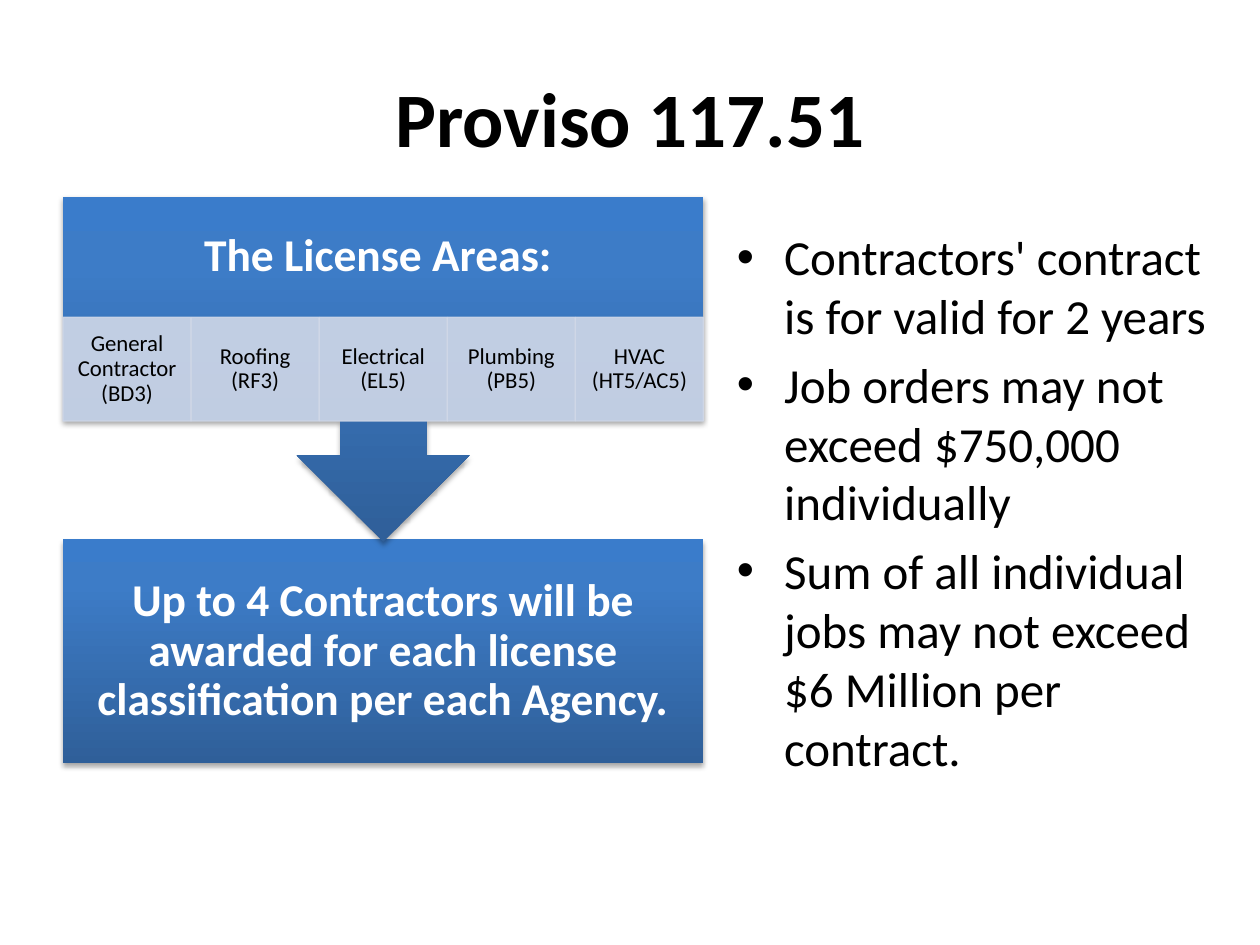
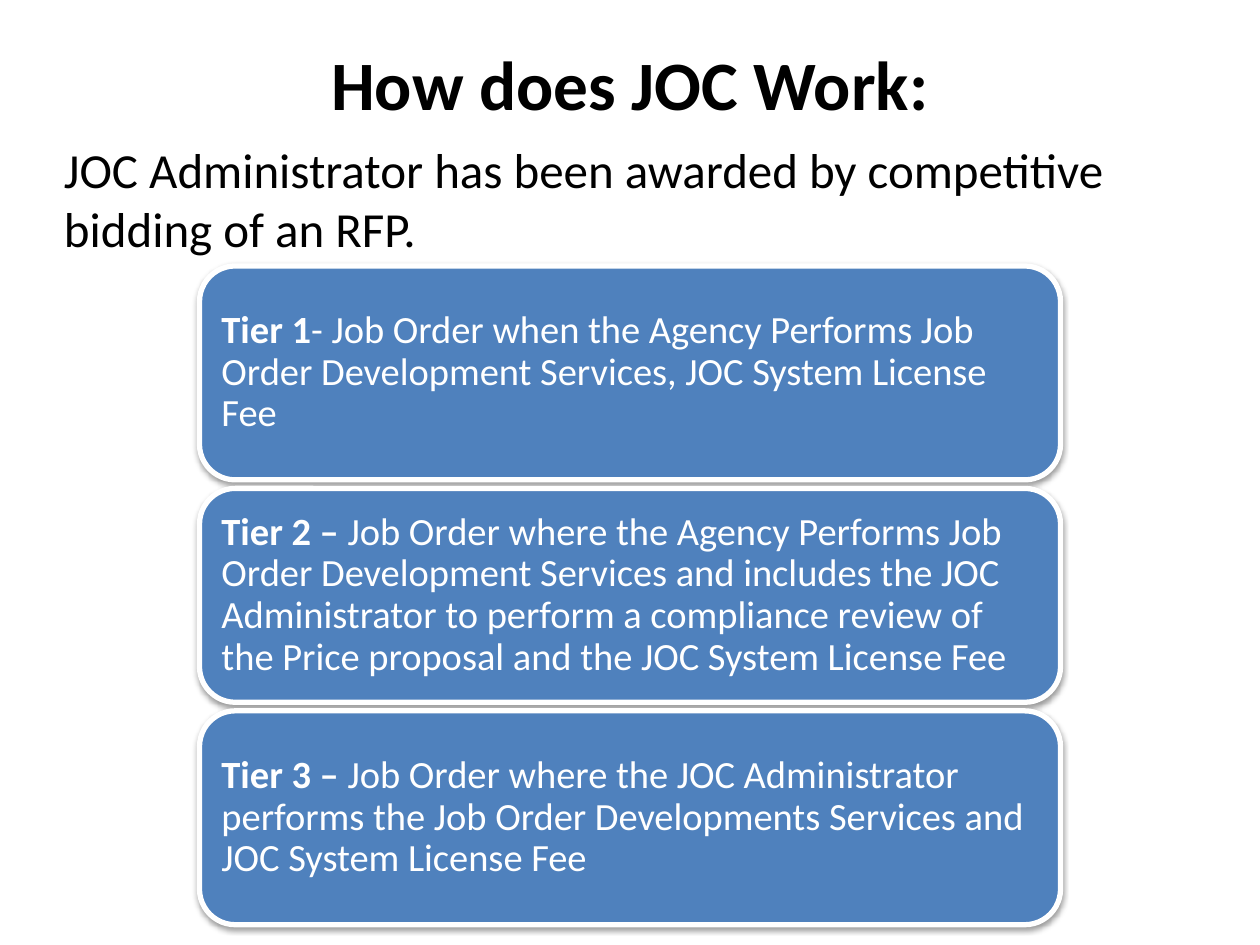
from lxml.etree import SubElement
from pptx import Presentation
from pptx.dml.color import RGBColor
from pptx.enum.shapes import MSO_SHAPE
from pptx.enum.text import MSO_ANCHOR, MSO_AUTO_SIZE, PP_ALIGN
from pptx.oxml.ns import qn
from pptx.util import Pt

FONT = "Calibri"
BLACK, WHITE = "000000", "FFFFFF"
TIER_BLUE, LICENSE_GREY = "4F81BD", "D0D8E8"
BLUE_STOPS = [(0, "2F5F99"), (80, "3D7CC7"), (100, "3A7CCB")]

PROVISO_TITLE = "Proviso 117.51"
LICENSE_HEADING = "The License Areas: "
LICENSES = [
    "General Contractor (BD3)",
    "Roofing (RF3)",
    "Electrical (EL5)",
    "Plumbing (PB5)",
    "HVAC (HT5/AC5)",
]
AWARD = "Up to 4 Contractors will be awarded for each license classification per each Agency."
CONTRACT_RULES = [
    "Contractors' contract is for valid for 2 years",
    "Job orders may not exceed $750,000 individually",
    "Sum of all individual jobs may not exceed $6 Million per contract.",
]

JOC_TITLE = "How does JOC Work:"
JOC_INTRO = "JOC Administrator has been awarded by competitive bidding of an RFP."
TIERS = [
    ("Tier 1", "- Job Order when the Agency Performs Job Order Development Services, "
               "JOC System License Fee"),
    ("Tier 2 – ", "Job Order where the Agency Performs Job Order Development Services "
                  "and includes the JOC Administrator to perform a compliance review of "
                  "the Price proposal and the JOC System License Fee"),
    ("Tier 3 – ", "Job Order where the JOC Administrator performs the Job Order "
                  "Developments Services and JOC System License Fee"),
]


def rgb(color):
    return RGBColor.from_string(color)


def place(shape, box):
    shape.left, shape.top, shape.width, shape.height = [Pt(v) for v in box]


def add_run(paragraph, text, size, color, bold=False):
    run = paragraph.add_run()
    run.text = text
    run.font.name = FONT
    run.font.size = Pt(size)
    run.font.bold = bold
    run.font.color.rgb = rgb(color)


def add_title(slide, text, box, size):
    title = slide.shapes.title
    place(title, box)
    frame = title.text_frame
    frame.auto_size = MSO_AUTO_SIZE.NONE
    frame.vertical_anchor = MSO_ANCHOR.MIDDLE
    paragraph = frame.paragraphs[0]
    paragraph.alignment = PP_ALIGN.CENTER
    add_run(paragraph, text, size, BLACK, True)


def add_body(slide, lines, box, bulleted=False):
    frame = slide.shapes.add_textbox(*[Pt(v) for v in box]).text_frame
    frame.word_wrap = True
    for index, line in enumerate(lines):
        paragraph = frame.add_paragraph() if index else frame.paragraphs[0]
        if index:
            paragraph.space_before = Pt(5.6)
        if bulleted:
            properties = paragraph._p.get_or_add_pPr()
            properties.set("marL", str(Pt(27)))
            properties.set("indent", str(Pt(-27)))
            SubElement(properties, qn("a:buFont"), typeface="Arial")
            SubElement(properties, qn("a:buChar"), char="•")
        add_run(paragraph, line, 28, BLACK)


def add_block(slide, preset, box, runs, size, color, insets, align=PP_ALIGN.CENTER):
    block = slide.shapes.add_shape(preset, *[Pt(v) for v in box])
    block.shadow.inherit = False
    block.line.fill.background()
    frame = block.text_frame
    frame.word_wrap = True
    frame.vertical_anchor = MSO_ANCHOR.MIDDLE
    frame.margin_left, frame.margin_top, frame.margin_right, frame.margin_bottom = [
        Pt(v) for v in insets]
    paragraph = frame.paragraphs[0]
    paragraph.alignment = align
    paragraph.line_spacing = 0.9
    for text, bold in runs:
        add_run(paragraph, text, size, color, bold)
    return block


def fill_plain(block, fill, line, width):
    block.fill.solid()
    block.fill.fore_color.rgb = rgb(fill)
    block.line.color.rgb = rgb(line)
    block.line.width = Pt(width)


def fill_gradient(block):
    block.fill.gradient()
    block.fill.gradient_angle = 90
    stops = block._element.spPr.find(".//" + qn("a:gsLst"))
    for stop in list(stops):
        stops.remove(stop)
    for position, color in BLUE_STOPS:
        stop = SubElement(stops, qn("a:gs"), pos=str(position * 1000))
        SubElement(stop, qn("a:srgbClr"), val=color)


def add_shadow(block, opacity, distance):
    effects = block._element.spPr.find(qn("a:effectLst"))
    shadow = SubElement(effects, qn("a:outerShdw"), blurRad=str(Pt(3.1)),
                        dist=str(Pt(distance)), dir="5400000", rotWithShape="0")
    color = SubElement(shadow, qn("a:srgbClr"), val=BLACK)
    SubElement(color, qn("a:alpha"), val=str(opacity * 1000))


def set_opacity(block, percent):
    for color in block._element.spPr.iter(qn("a:srgbClr")):
        SubElement(color, qn("a:alpha"), val=str(percent * 1000))


def build_proviso(slide):
    add_title(slide, PROVISO_TITLE, (36, 21.6, 648, 90), 44)
    add_body(slide, CONTRACT_RULES, (414, 126, 300, 356.4), bulleted=True)

    left, width, inset = 36, 366, 14.4
    license_top, license_height = 181.4, 59.2
    award = add_block(slide, MSO_SHAPE.RECTANGLE, (left, 308.2, width, 128),
                      [(AWARD, True)], 26, WHITE, [inset] * 4)
    heading = add_block(slide, MSO_SHAPE.DOWN_ARROW_CALLOUT, (left, 112.4, width, 197.2),
                        [(LICENSE_HEADING, True)], 26, WHITE,
                        (inset, inset, inset, inset + license_height))
    for block in (award, heading):
        fill_gradient(block)
        add_shadow(block, 35, 1.8)

    license_width = width / len(LICENSES)
    for index, name in enumerate(LICENSES):
        box = (left + index * license_width, license_top, license_width, license_height)
        area = add_block(slide, MSO_SHAPE.RECTANGLE, box, [(name, False)], 13, BLACK,
                         (7.2, 1.3, 7.2, 1.3))
        fill_plain(area, LICENSE_GREY, LICENSE_GREY, 0.75)
        set_opacity(area, 90)


def build_joc(slide):
    add_title(slide, JOC_TITLE, (36, 21.6, 648, 51.8), 39.6)
    add_body(slide, [JOC_INTRO], (29.5, 76.3, 651, 356.4))
    tier_top, tier_step = 152, 127.1
    for index, (label, description) in enumerate(TIERS):
        box = (114, tier_top + index * tier_step, 492, 122.2)
        tier = add_block(slide, MSO_SHAPE.ROUNDED_RECTANGLE, box,
                         [(label, True), (description, False)], 22, WHITE,
                         [6.6] * 4, PP_ALIGN.LEFT)
        fill_plain(tier, TIER_BLUE, WHITE, 3)
        add_shadow(tier, 38, 1.6)


def main():
    deck = Presentation()
    deck.slide_width, deck.slide_height = Pt(720), Pt(540)
    title_only = deck.slide_layouts[5]
    for build in (build_proviso, build_joc):
        build(deck.slides.add_slide(title_only))
    deck.save("out.pptx")


if __name__ == "__main__":
    main()
